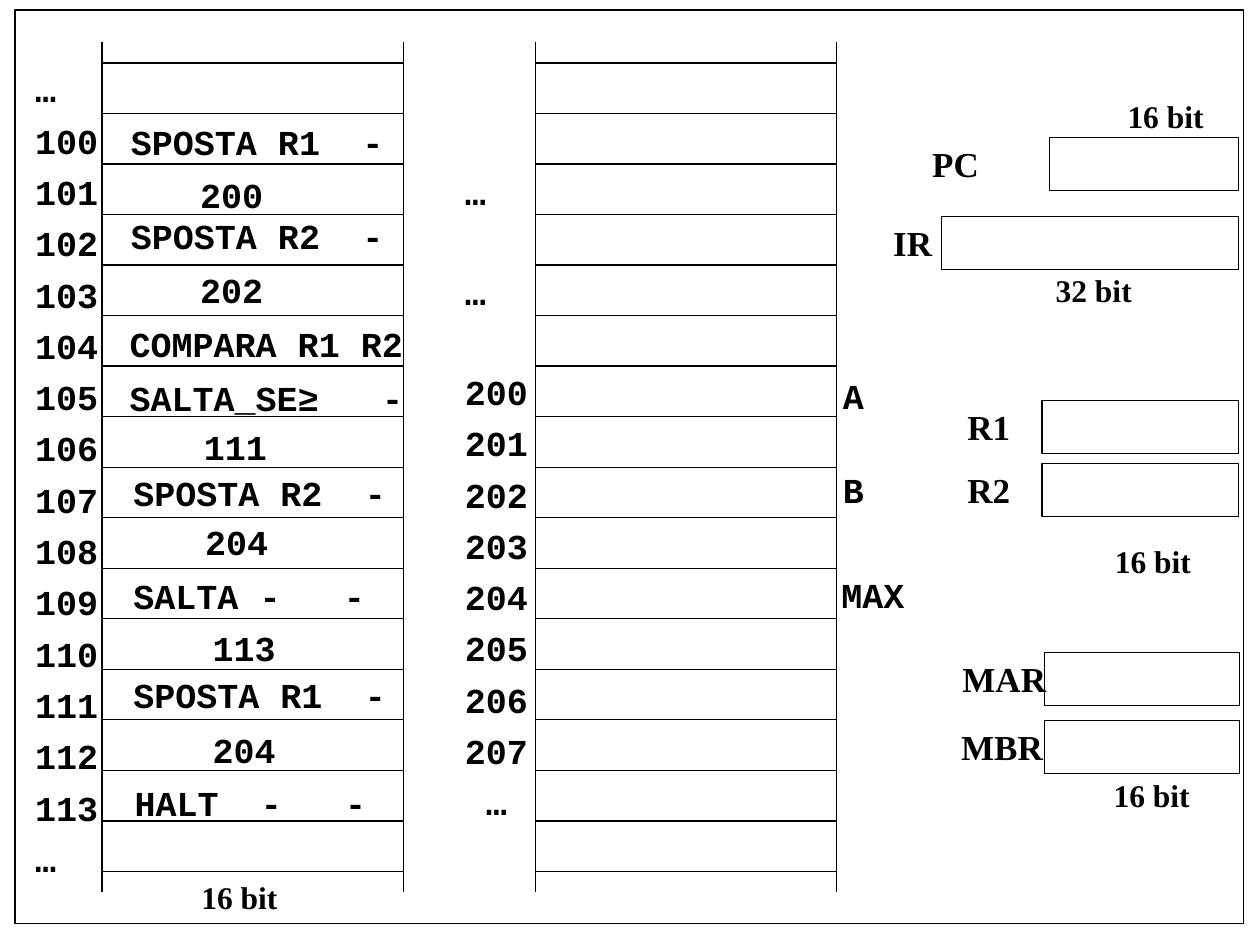
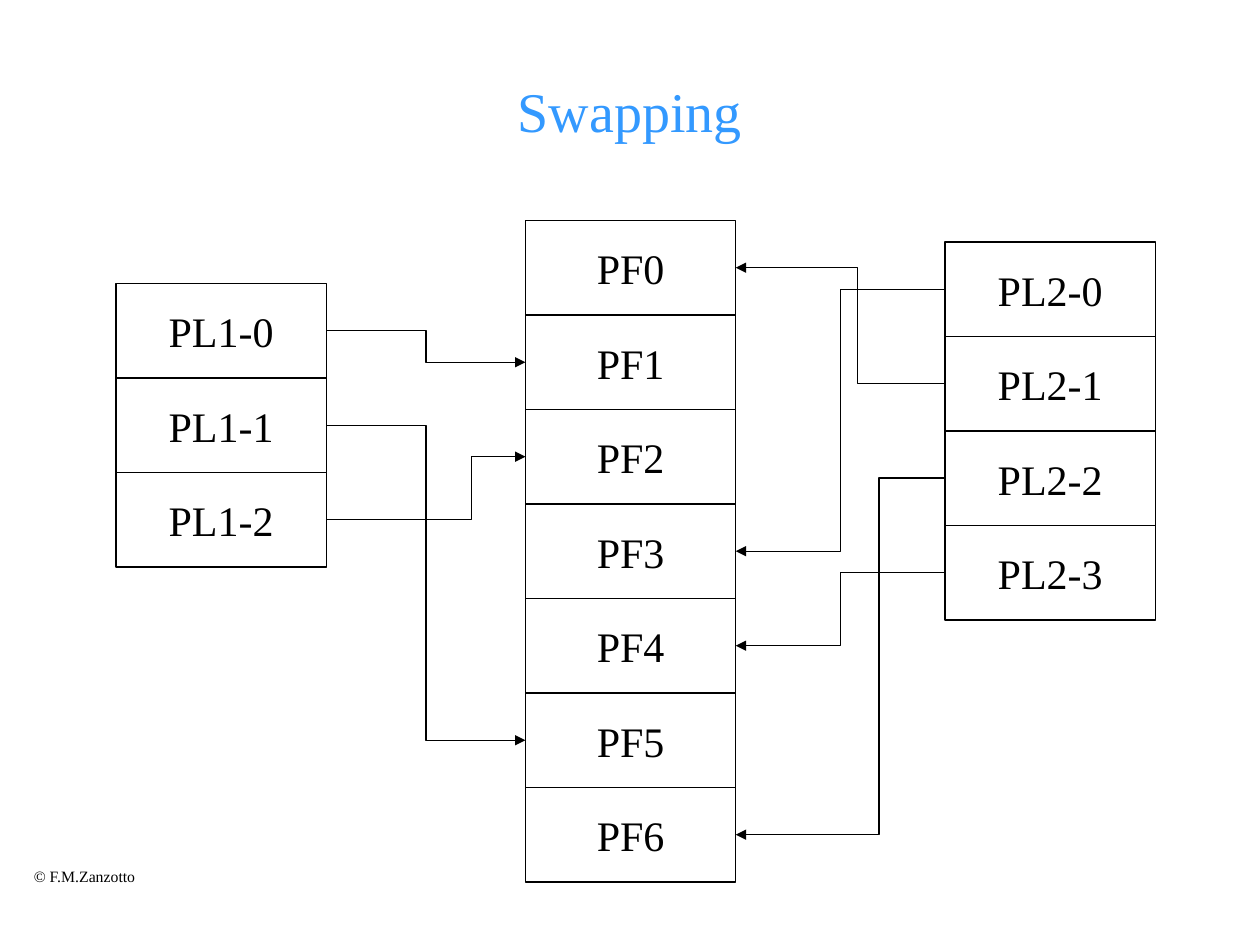
"""Build two slides: a machine-language memory map and a page swapping diagram."""
from pptx import Presentation
from pptx.dml.color import RGBColor
from pptx.enum import shapes, text
from pptx.oxml import xmlchemy
from pptx.util import Inches, Pt

COLORS = {"ink": "000000", "paper": "FFFFFF", "title": "3399FF"}
SERIF, MONO = "Times New Roman", "Courier New"
CHAR_W = 0.167

WORD_W, WORD_H, WORD_COUNT, MEMORY_TOP = 2.39, 0.401, 16, 0.5
MEMORY_LEFTS = [0.81, 4.25]
CODE_ADDRESSES = ["…", *map(str, range(100, 114)), "…"]
DATA_ADDRESSES = ["…", "…", *map(str, range(200, 208)), "…"]
DATA_GAPS = [1, 2]

# text, left, top, tab columns
INSTRUCTIONS = [
    ("SPOSTA R1\t-", 0.94, 0.91, [11]),
    ("200", 1.49, 1.33, []),
    ("SPOSTA R2\t-", 0.94, 1.65, [11]),
    ("202", 1.49, 2.08, []),
    ("COMPARA R1 R2", 0.93, 2.51, []),
    ("SALTA_SE≥\t-", 0.93, 2.94, [12]),
    ("111", 1.52, 3.33, []),
    ("SPOSTA R2\t-", 0.96, 3.69, [11]),
    ("204", 1.53, 4.08, []),
    ("SALTA\t-\t-", 0.96, 4.51, [6, 10]),
    ("113", 1.59, 4.92, []),
    ("SPOSTA R1\t-", 0.96, 5.3, [11]),
    ("204", 1.59, 5.73, []),
    ("HALT\t-\t-", 0.97, 6.15, [6, 10]),
]
VARIABLES = [("A", 6.59, 2.92, []), ("B", 6.59, 3.67, []), ("MAX", 6.58, 4.5, [])]

REGISTERS = [
    ("PC", 7.3, 0.57, 8.33, 1.09, 1.5),
    ("IR", 6.99, 0.51, 7.47, 1.72, 2.36),
    ("R1", 7.58, 0.54, 8.27, 3.18, 1.56),
    ("R2", 7.58, 0.54, 8.27, 3.68, 1.56),
    ("MAR", 7.54, 0.87, 8.29, 5.18, 1.55),
    ("MBR", 7.53, 0.85, 8.29, 5.72, 1.55),
]
WIDTHS = [("16 bit", 1.5, 6.92), ("16 bit", 8.74, 6.11), ("16 bit", 8.75, 4.25),
          ("16 bit", 8.85, 0.72), ("32 bit", 8.28, 2.1)]

PAGE_W, PAGE_H = 1.67, 0.75
PAGE_STACKS = [("PF", 7, 4.17, 1.75), ("PL1-", 3, 0.92, 2.25), ("PL2-", 4, 7.5, 1.92)]
MAPPINGS = [
    ("PL2-0", "PF3", 0.5), ("PL2-1", "PF0", 0.419),
    ("PL2-3", "PF4", 0.5), ("PL2-2", "PF6", 0.315),
    ("PL1-0", "PF1", 0.5), ("PL1-1", "PF5", 0.5), ("PL1-2", "PF2", 0.73),
]
LEFT_SITE, RIGHT_SITE = 1, 3


def color(name):
    return RGBColor.from_string(COLORS[name])


def style(p, size, face=SERIF, bold=False, ink="ink"):
    f = p.font
    f.size, f.name, f.bold = Pt(size), face, bold
    f.color.rgb = color(ink)


def add_child(parent, tag, **attrs):
    child = parent.makeelement(xmlchemy.qn(tag), {k: str(v) for k, v in attrs.items()})
    parent.append(child)
    return child


def add_box(s, left, top, width, height, fill=None):
    sp = s.shapes.add_shape(shapes.MSO_SHAPE.RECTANGLE, *map(Inches, (left, top, width, height)))
    sp.shadow.inherit = False
    if fill:
        sp.fill.solid()
        sp.fill.fore_color.rgb = color(fill)
    else:
        sp.fill.background()
    sp.line.color.rgb, sp.line.width = color("ink"), Pt(0.75)
    return sp


def add_line(s, kind, x1=0, y1=0, x2=0, y2=0):
    cn = s.shapes.add_connector(kind, *map(Inches, (x1, y1, x2, y2)))
    cn.line.color.rgb, cn.line.width = color("ink"), Pt(0.75)
    add_child(cn._element.spPr, "a:effectLst")
    return cn


def add_label(s, words, left, top, width, height, size, face=SERIF, bold=True, wrap=False):
    tf = s.shapes.add_textbox(*map(Inches, (left, top, width, height))).text_frame
    tf.word_wrap = wrap
    p = tf.paragraphs[0]
    p.text = words
    style(p, size, face, bold)
    return tf


def add_code(s, words, left, top, tabs):
    length = tabs[-1] + 1 if tabs else len(words)
    tf = add_label(s, words, left, top, length * CHAR_W + 0.25, 0.43, 20, MONO, wrap=True)
    if tabs:
        pPr = tf.paragraphs[0]._p.get_or_add_pPr()
        stops = pPr.makeelement(xmlchemy.qn("a:tabLst"), {})
        pPr.insert(0, stops)
        for column in tabs:
            add_child(stops, "a:tab", pos=Inches(column * CHAR_W), algn="l")


def add_addresses(s, addresses, left, top, height, gaps=()):
    tf = add_label(s, addresses[0], left, top, 0.75, height, 20, MONO, wrap=True)
    for i, address in enumerate(addresses[1:], 1):
        p = tf.add_paragraph()
        p.text = address
        p.space_before = Pt(33.3 if i in gaps else 5.3)
        style(p, 20, MONO, True)
    return tf


def add_memory(s, left):
    for i in range(WORD_COUNT):
        add_box(s, left, MEMORY_TOP + i * WORD_H, WORD_W, WORD_H)
    bottom = MEMORY_TOP + WORD_COUNT * WORD_H
    for x, overlap in ((left, 0), (left + WORD_W, 0.08)):
        add_line(s, shapes.MSO_CONNECTOR.STRAIGHT, x, MEMORY_TOP + overlap, x, 0.33)
        add_line(s, shapes.MSO_CONNECTOR.STRAIGHT, x, bottom - overlap, x, 7.08)


def build_memory_slide(prs):
    s = prs.slides.add_slide(prs.slide_layouts[6])
    add_box(s, 0.12, 0.08, 9.75, 7.25, "paper")
    for name, label_left, label_w, left, top, width in REGISTERS:
        add_box(s, left, top, width, 0.42)
        add_label(s, name, label_left, top - 0.01, label_w, 0.43, 20)
    for left in MEMORY_LEFTS:
        add_memory(s, left)
    add_addresses(s, CODE_ADDRESSES, 0.18, 0.49, 6.9)
    tf = add_addresses(s, DATA_ADDRESSES, 3.59, 1.3, 5.62, DATA_GAPS)
    last = tf.paragraphs[-1]._p.get_or_add_pPr()
    last.set("marL", str(Inches(CHAR_W)))
    for item in INSTRUCTIONS + VARIABLES:
        add_code(s, *item)
    for words, left, top in WIDTHS:
        add_label(s, words, left, top, 0.81, 0.4, 18)


def add_mapping(s, source, target, bend):
    rightward = source.left < target.left
    cn = add_line(s, shapes.MSO_CONNECTOR.ELBOW)
    cn.begin_connect(source, RIGHT_SITE if rightward else LEFT_SITE)
    cn.end_connect(target, LEFT_SITE if rightward else RIGHT_SITE)
    guides = cn._element.spPr.find(xmlchemy.qn("a:prstGeom")).get_or_add_avLst()
    add_child(guides, "a:gd", name="adj1", fmla=f"val {round(bend * 100000)}")
    add_child(cn.line._get_or_add_ln(), "a:tailEnd", type="triangle")


def build_swapping_slide(prs):
    s = prs.slides.add_slide(prs.slide_layouts[5])
    title = s.shapes.title
    title.left, title.top, title.width, title.height = map(Inches, (0.75, 0.5, 8.5, 0.75))
    title.text_frame.text = "Swapping"
    title.text_frame.vertical_anchor = text.MSO_ANCHOR.MIDDLE
    p = title.text_frame.paragraphs[0]
    p.alignment = text.PP_ALIGN.CENTER
    style(p, 32, ink="title")
    add_label(s, "© F.M.Zanzotto", 0.17, 6.83, 1.02, 0.25, 9, bold=False)

    pages = {}
    for prefix, count, left, top in PAGE_STACKS:
        for i in range(count):
            sp = add_box(s, left, top + i * PAGE_H, PAGE_W, PAGE_H)
            tf = sp.text_frame
            tf.text, tf.word_wrap = f"{prefix}{i}", False
            tf.vertical_anchor = text.MSO_ANCHOR.MIDDLE
            tf.paragraphs[0].alignment = text.PP_ALIGN.CENTER
            style(tf.paragraphs[0], 24)
            pages[tf.text] = sp
    for source, target, bend in MAPPINGS:
        add_mapping(s, pages[source], pages[target], bend)


def main():
    prs = Presentation()
    prs.slide_width, prs.slide_height = Inches(10), Inches(7.5)
    build_memory_slide(prs)
    build_swapping_slide(prs)
    prs.save("out.pptx")


if __name__ == "__main__":
    main()
